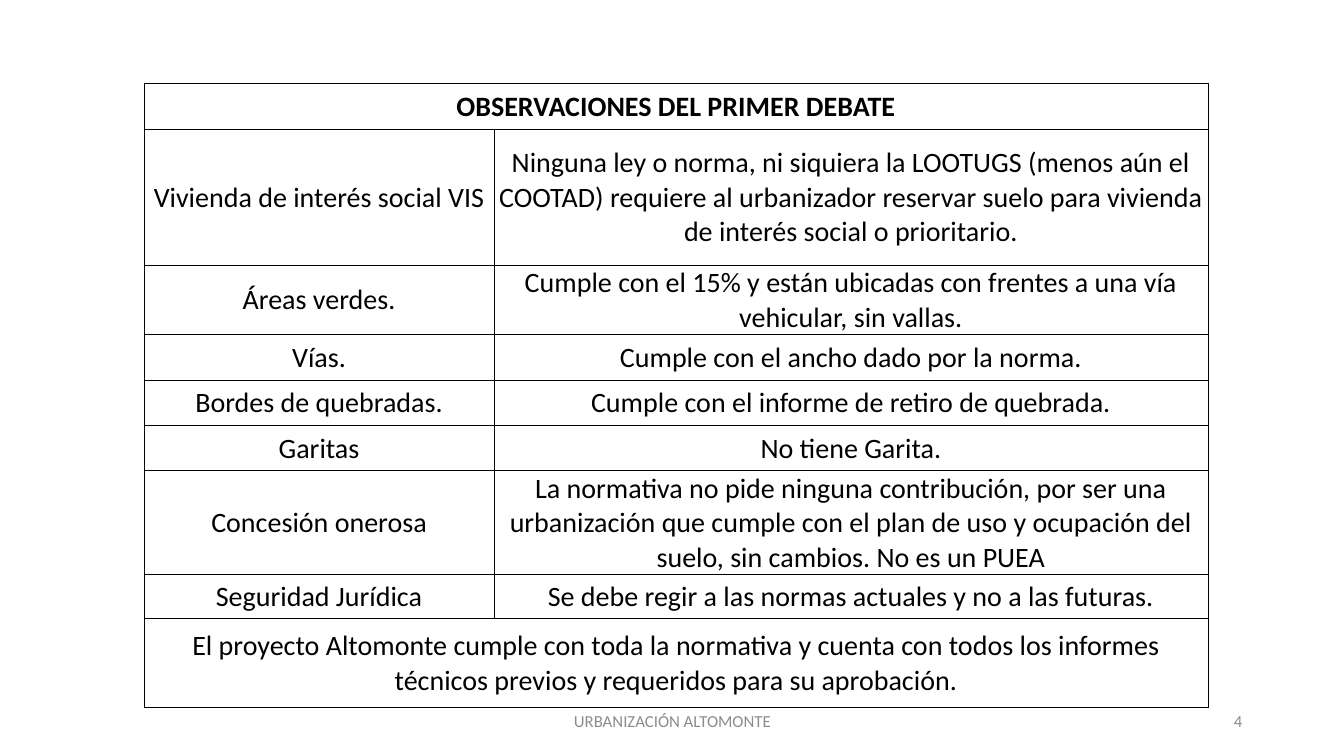
from dataclasses import dataclass

from lxml.etree import SubElement
from pptx import Presentation
from pptx.dml.color import RGBColor
from pptx.enum.text import MSO_ANCHOR as Anchor, PP_ALIGN as Align
from pptx.oxml.ns import qn
from pptx.util import Inches, Pt

COLORS = {"text": "000000", "border": "000000", "footer": "8C8C8C", "fill": "FFFFFF"}
FONT = "Calibri"
COLUMN_WIDTHS = (3.47, 7.08)


@dataclass
class Row:
    height: float
    texts: tuple[str, ...]
    bold: bool = False


@dataclass
class Footer:
    text: str
    left: float
    width: float
    align: Align


ROWS = [
    Row(0.45, ("OBSERVACIONES DEL PRIMER DEBATE",), bold=True),
    Row(1.35, ("Vivienda de interés social VIS",
               "Ninguna ley o norma, ni siquiera la LOOTUGS (menos aún el COOTAD) requiere "
               "al urbanizador reservar suelo para vivienda de interés social o prioritario.")),
    Row(0.45, ("Áreas verdes.",
               "Cumple con el 15% y están ubicadas con frentes a una vía vehicular, sin vallas.")),
    Row(0.45, ("Vías.", "Cumple con el ancho dado por la norma.")),
    Row(0.45, ("Bordes de quebradas.", "Cumple con el informe de retiro de quebrada.")),
    Row(0.45, ("Garitas", "No tiene Garita.")),
    Row(0.9, ("Concesión onerosa",
              "La normativa no pide ninguna contribución, por ser una urbanización que cumple "
              "con el plan de uso y ocupación del suelo, sin cambios. No es un PUEA")),
    Row(0.43, ("Seguridad Jurídica", "Se debe regir a las normas actuales y no a las futuras.")),
    Row(0.89, ("El proyecto Altomonte cumple con toda la normativa y cuenta con todos los "
               "informes técnicos previos y requeridos para su aprobación.",)),
]

FOOTERS = [
    Footer("URBANIZACIÓN ALTOMONTE", 4.42, 4.5, Align.CENTER),
    Footer("4", 9.42, 3, Align.RIGHT),
]


def write(tf, text: str, size: int, color: str, align: Align, bold: bool = False) -> None:
    p = tf.paragraphs[0]
    p.text = text
    p.alignment = align
    for r in p.runs:
        r.font.name = FONT
        r.font.size = Pt(size)
        r.font.bold = bold
        r.font.color.rgb = RGBColor.from_string(COLORS[color])


def format_cell(cell) -> None:
    cell.vertical_anchor = Anchor.MIDDLE
    cell.margin_left = cell.margin_right = cell.margin_top = Inches(0.01)
    cell.margin_bottom = 0
    tc_pr = cell._tc.get_or_add_tcPr()
    for side in ("lnL", "lnR", "lnT", "lnB"):
        line = SubElement(tc_pr, qn(f"a:{side}"), w=str(Pt(0.5)))
        fill = SubElement(line, qn("a:solidFill"))
        SubElement(fill, qn("a:srgbClr"), val=COLORS["border"])
    cell.fill.solid()
    cell.fill.fore_color.rgb = RGBColor.from_string(COLORS["fill"])


def add_observations(s, rows: list[Row]) -> None:
    table = s.shapes.add_table(
        len(rows), len(COLUMN_WIDTHS), Inches(1.43), Inches(0.83),
        Inches(sum(COLUMN_WIDTHS)), Inches(sum(row.height for row in rows)),
    ).table
    table.first_row = table.horz_banding = False
    for column, width in zip(table.columns, COLUMN_WIDTHS):
        column.width = Inches(width)
    for i, row in enumerate(rows):
        table.rows[i].height = Inches(row.height)
        for cell in table.rows[i].cells:
            format_cell(cell)
        if len(row.texts) == 1:
            table.cell(i, 0).merge(table.cell(i, 1))
        for j, text in enumerate(row.texts):
            write(table.cell(i, j).text_frame, text, 20, "text", Align.CENTER, row.bold)


def add_footer(s, footer: Footer) -> None:
    sp = s.shapes.add_textbox(Inches(footer.left), Inches(6.95), Inches(footer.width), Inches(0.4))
    tf = sp.text_frame
    tf.word_wrap = True
    tf.vertical_anchor = Anchor.MIDDLE
    write(tf, footer.text, 12, "footer", footer.align)


def main() -> None:
    prs = Presentation()
    prs.slide_width, prs.slide_height = Inches(13.33), Inches(7.5)
    s = prs.slides.add_slide(prs.slide_layouts[6])
    add_observations(s, ROWS)
    for footer in FOOTERS:
        add_footer(s, footer)
    prs.save("out.pptx")


if __name__ == "__main__":
    main()
